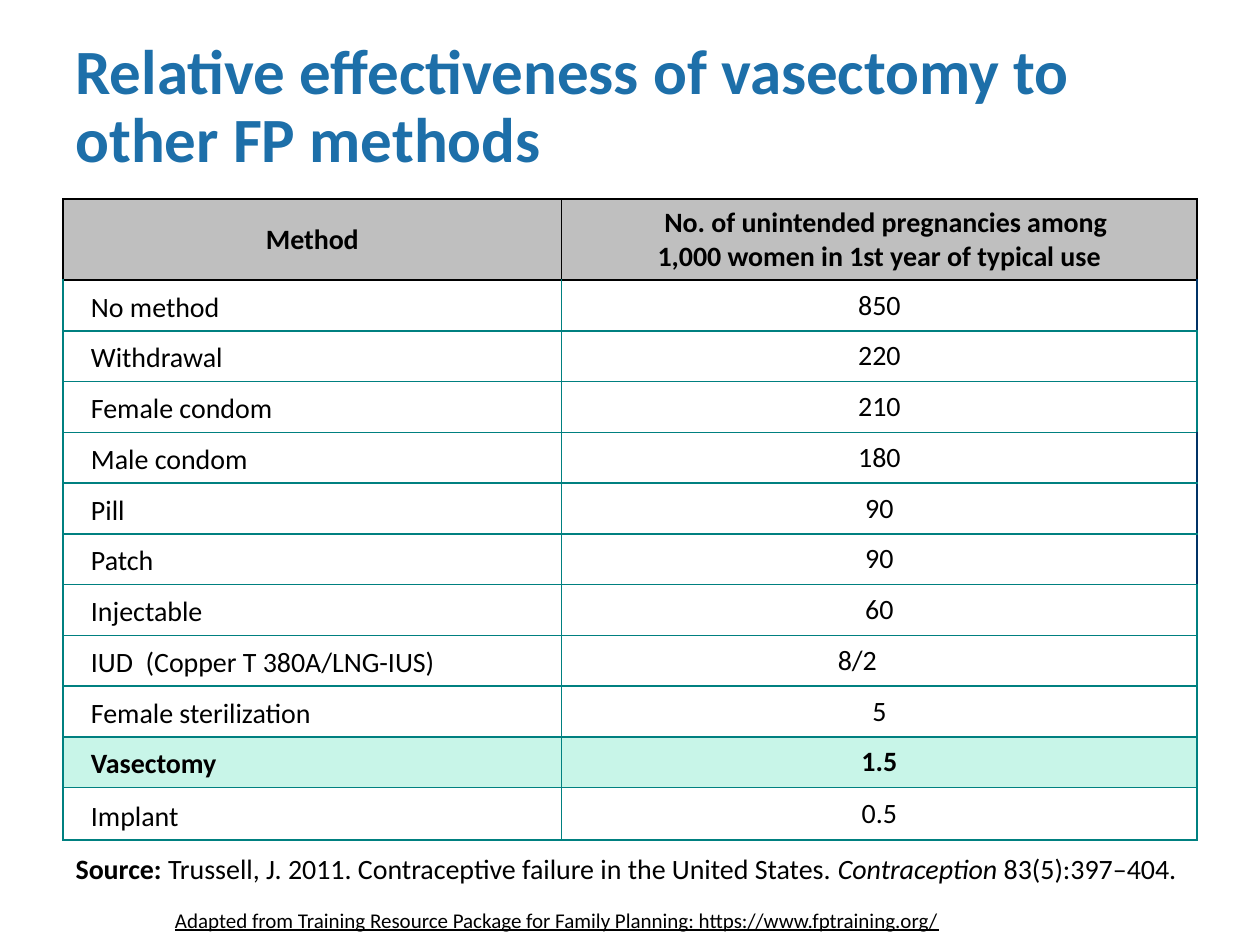
from dataclasses import dataclass

from pptx import Presentation
from pptx.dml.color import RGBColor as RGB
from pptx.enum.text import MSO_ANCHOR as Anchor, PP_ALIGN as Align
from pptx.oxml.ns import qn
from pptx.util import Pt
from lxml.etree import SubElement


@dataclass(frozen=True)
class Theme:
    font: str = "Calibri"
    title_size: int = 36
    body_size: int = 16
    credit_size: int = 12
    title: str = "1D6FA9"
    text: str = "000000"
    header_fill: str = "BFBFBF"
    highlight_fill: str = "C8F5E8"
    grid: str = "008080"
    grid_dark: str = "003366"


THEME = Theme()

TITLE = "Relative effectiveness of vasectomy to other FP methods"
HEADER = ("Method", ("No. of unintended pregnancies among",
                     "1,000 women in 1st year of typical use"))
METHODS = [
    ("No method", "850"),
    ("Withdrawal", "220"),
    ("Female condom", "210"),
    ("Male condom", "180"),
    ("Pill", "90"),
    ("Patch", "90"),
    ("Injectable", "60"),
    ("IUD  (Copper T 380A/LNG-IUS)", "8/2"),
    ("Female sterilization", "5"),
    ("Vasectomy", "1.5"),
    ("Implant", "0.5"),
]
HIGHLIGHT = "Vasectomy"
DARK_EDGE = {"No method", "Male condom", "Pill", "Patch"}
SOURCE = [
    ("Source: ", {"bold": True}),
    ("Trussell, J. 2011. Contraceptive failure in the United States. ", {}),
    ("Contraception", {"italic": True}),
    (" 83(5):397–404.", {}),
]
CREDIT = ("Adapted from Training Resource Package for Family Planning: "
          "https://www.fptraining.org/")

COLUMN_WIDTHS = (285, 363)
HEADER_HEIGHT, ROW_HEIGHT, LAST_HEIGHT, SOURCE_HEIGHT = 46.3, 29, 30, 50.4


def add_run(p, text, size=THEME.body_size, color=THEME.text,
            bold=False, italic=False, underline=False):
    r = p.add_run()
    r.text = text
    font = r.font
    font.name, font.size = THEME.font, Pt(size)
    font.color.rgb = RGB.from_string(color)
    font.bold, font.italic, font.underline = bold, italic, underline


def add_text(slide, left, top, width, height, text, anchor=Anchor.TOP,
             spacing=None, **style):
    tf = slide.shapes.add_textbox(
        Pt(left), Pt(top), Pt(width), Pt(height)).text_frame
    tf.word_wrap = True
    tf.vertical_anchor = anchor
    p = tf.paragraphs[0]
    p.line_spacing = spacing
    add_run(p, text, **style)


def set_borders(cell, **colors):
    """Draw 1 pt edges by side (L, R, T, B); None hides an edge."""
    tc_pr = cell._tc.get_or_add_tcPr()
    lines = []
    for side in "LRTB":
        ln = SubElement(tc_pr, qn(f"a:ln{side}"), w=str(Pt(1)))
        color = colors[side]
        if color:
            fill = SubElement(ln, qn("a:solidFill"))
            SubElement(fill, qn("a:srgbClr"), val=color)
        else:
            SubElement(ln, qn("a:noFill"))
        lines.append(ln)
    for i, ln in enumerate(lines):  # edges precede the fill in the schema
        tc_pr.insert(i, ln)


def style_cell(cell, fill=None, anchor=Anchor.MIDDLE, **borders):
    cell.vertical_anchor = anchor
    if fill:
        cell.fill.solid()
        cell.fill.fore_color.rgb = RGB.from_string(fill)
    else:
        cell.fill.background()
    set_borders(cell, **borders)


def fill_header(cells):
    edges = dict.fromkeys("LRTB", THEME.text)
    label, count = cells
    for cell in cells:
        style_cell(cell, THEME.header_fill, **edges)
    add_run(label.text_frame.paragraphs[0], HEADER[0], bold=True)
    tf = count.text_frame
    first, second = tf.paragraphs[0], tf.add_paragraph()
    for p, line in zip((first, second), HEADER[1]):
        add_run(p, line, bold=True)
    first._p.get_or_add_pPr().set("marL", str(Pt(7.4)))
    for p in (label.text_frame.paragraphs[0], first, second):
        p.alignment = Align.CENTER


def fill_method(cells, method, count, is_first):
    label, value = cells
    bold = method == HIGHLIGHT
    fill = THEME.highlight_fill if bold else None
    edges = dict.fromkeys("LRTB", THEME.grid)
    if is_first:
        edges["T"] = THEME.text
    style_cell(label, fill, Anchor.BOTTOM, **edges)
    if method in DARK_EDGE:
        edges["R"] = THEME.grid_dark
    style_cell(value, fill, **edges)
    label.margin_left = Pt(16)
    add_run(label.text_frame.paragraphs[0], method, bold=bold)
    p = value.text_frame.paragraphs[0]
    p.alignment = Align.CENTER
    add_run(p, count, bold=bold)
    if "/" in count:
        value.margin_right = Pt(32.4)


def fill_source(cells):
    left, right = cells
    left.merge(right)
    for cell in cells:
        style_cell(cell, anchor=Anchor.TOP, L=None, R=None, T=THEME.grid, B=None)
    left.margin_top = Pt(7)
    for text, style in SOURCE:
        add_run(left.text_frame.paragraphs[0], text, **style)


def add_methods_table(slide, left, top):
    heights = [HEADER_HEIGHT, *[ROW_HEIGHT] * (len(METHODS) - 1),
               LAST_HEIGHT, SOURCE_HEIGHT]
    table = slide.shapes.add_table(
        len(heights), len(COLUMN_WIDTHS), Pt(left), Pt(top),
        Pt(sum(COLUMN_WIDTHS)), Pt(sum(heights))).table
    table.first_row = table.horz_banding = False
    for column, width in zip(table.columns, COLUMN_WIDTHS):
        column.width = Pt(width)
    for row, height in zip(table.rows, heights):
        row.height = Pt(height)

    header, *body, source = [tuple(row.cells) for row in table.rows]
    fill_header(header)
    for i, (cells, (method, count)) in enumerate(zip(body, METHODS)):
        fill_method(cells, method, count, is_first=i == 0)
    fill_source(source)


def main():
    prs = Presentation()
    prs.slide_width, prs.slide_height = Pt(720), Pt(540)
    slide = prs.slides.add_slide(prs.slide_layouts[6])
    add_text(slide, 36, 16.5, 660, 90, TITLE, Anchor.MIDDLE, 0.9,
             size=THEME.title_size, color=THEME.title, bold=True)
    add_methods_table(slide, 36, 113.8)
    add_text(slide, 92.9, 514.8, 500, 19.4, CREDIT,
             size=THEME.credit_size, underline=True)
    prs.save("out.pptx")


if __name__ == "__main__":
    main()
